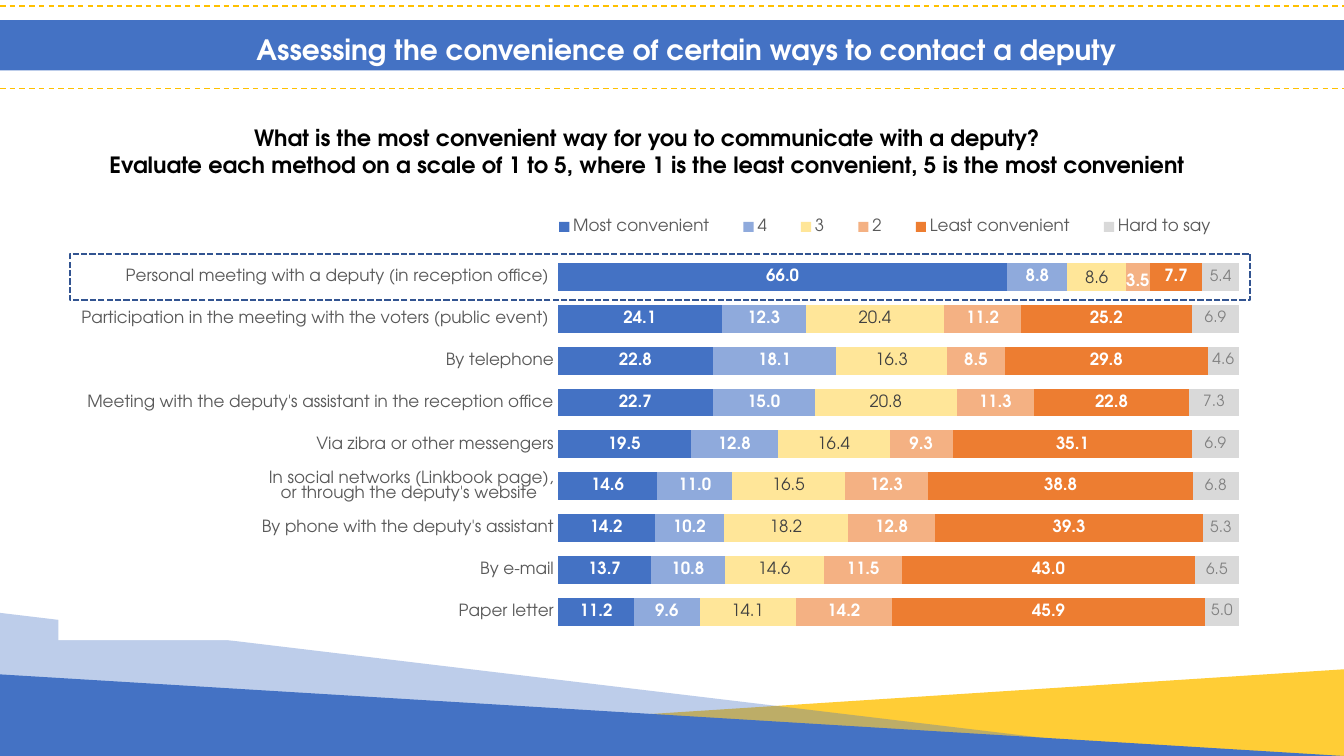
from lxml import etree
from pptx import Presentation
from pptx.chart.data import CategoryChartData
from pptx.dml.color import RGBColor
from pptx.enum.chart import XL_CHART_TYPE as ChartType
from pptx.enum.chart import XL_LABEL_POSITION as LabelPosition
from pptx.enum.chart import XL_LEGEND_POSITION as LegendPosition
from pptx.enum.chart import XL_TICK_MARK as TickMark
from pptx.enum.dml import MSO_LINE as Dash
from pptx.enum.shapes import MSO_CONNECTOR as Connector
from pptx.enum.shapes import MSO_SHAPE as Shape
from pptx.enum.text import MSO_ANCHOR as Anchor
from pptx.enum.text import PP_ALIGN as Align
from pptx.oxml import parse_xml
from pptx.oxml.ns import nsdecls, qn
from pptx.util import Inches, Pt

WIDTH, HEIGHT = 13.33, 7.5
FONT = "TeX Gyre Adventor"
WHITE = RGBColor(0xFF, 0xFF, 0xFF)
BLACK = RGBColor(0, 0, 0)
BLUE = RGBColor(0x44, 0x72, 0xC4)
NAVY = RGBColor(0x32, 0x54, 0x91)
LIGHT_BLUE = RGBColor(0x8F, 0xAA, 0xDC)
GOLD = RGBColor(0xFF, 0xC0, 0x00)
PALE_YELLOW = RGBColor(0xFF, 0xE6, 0x99)
PEACH = RGBColor(0xF4, 0xB1, 0x83)
ORANGE = RGBColor(0xED, 0x7D, 0x31)
LIGHT_GREY = RGBColor(0xD9, 0xD9, 0xD9)
GREY = RGBColor(0x80, 0x80, 0x80)
AXIS_GREY = RGBColor(0x59, 0x59, 0x59)
DARK_GREY = RGBColor(0x40, 0x40, 0x40)

# Lines, box (left, top, width, height), font
TEXTS = [
    (["Assessing the convenience of certain ways to contact a deputy"],
     (1.18, 0.27, 11.26, 0.44), {"size": Pt(20), "bold": True, "color": WHITE}),
    (["What is the most convenient way for you to communicate with a deputy?",
      "Evaluate each method on a scale of 1 to 5, where 1 is the least convenient, "
      "5 is the most convenient"],
     (0.79, 1.18, 11.26, 0.64), {"size": Pt(16), "bold": True, "color": BLACK}),
]

# Top, width, apex position, colour, opacity in percent
WEDGES = [
    (6.64, WIDTH, 1, GOLD, 79),
    (6.69, WIDTH, 0, BLUE, 100),
    (6.08, 11.85, 0, BLUE, 35),
]
DASHED_LINE_TOPS = [0.06, 0.88]
BANNER_BOX = (0, 0.2, WIDTH, 0.5)
HIGHLIGHT_BOX = (0.69, 2.52, 11.71, 0.46)
CHART_BOX = (0.58, 1.82, 11.71, 4.53)

# Shares of the chart's size: left, top, width, height
PLOT_LAYOUT = (0.423, 0.159, 0.577, 0.825)
LEGEND_LAYOUT = (0.4, 0.06, 0.6, 0.07)
# Downward shift of the first label in a series, as a share of the chart's height
FIRST_LABEL_SHIFTS = {"3": 0.005, "2": 0.01}

METHODS = [
    "Personal meeting with a deputy (in reception office) ",
    "Participation in the meeting with the voters (public event) ",
    "By telephone",
    "Meeting with the deputy's assistant in the reception office",
    "Via zibra or other messengers",
    "In social networks (Linkbook page),\nor through the deputy's website ",
    "By phone with the deputy's assistant",
    "By e-mail",
    "Paper letter",
]
BOLD_WHITE = {"size": Pt(12), "bold": True, "color": WHITE}
# Name, values, bar colour, label font
RATINGS = [
    ("Most convenient", (66, 24.1, 22.8, 22.7, 19.5, 14.6, 14.2, 13.7, 11.2),
     BLUE, BOLD_WHITE),
    ("4", (8.8, 12.3, 18.1, 15, 12.8, 11, 10.2, 10.8, 9.6), LIGHT_BLUE, BOLD_WHITE),
    ("3", (8.6, 20.4, 16.3, 20.8, 16.4, 16.5, 18.2, 14.6, 14.1),
     PALE_YELLOW, {"size": Pt(12), "bold": False, "color": DARK_GREY}),
    ("2", (3.5, 11.2, 8.5, 11.3, 9.3, 12.3, 12.8, 11.5, 14.2), PEACH, BOLD_WHITE),
    ("Least convenient", (7.7, 25.2, 29.8, 22.8, 35.1, 38.8, 39.3, 43, 45.9),
     ORANGE, BOLD_WHITE),
    ("Hard to say", (5.4, 6.9, 4.6, 7.3, 6.9, 6.8, 5.3, 6.5, 5),
     LIGHT_GREY, {"size": Pt(11), "bold": False, "color": GREY}),
]


def inches(box):
    return [Inches(length) for length in box]


def set_font(font, color, **values):
    font.name = FONT
    font.color.rgb = color
    for name, value in values.items():
        setattr(font, name, value)


def add_filled_shape(slide, kind, box, color=None):
    """Add a shape without outline; no colour means no fill."""
    shape = slide.shapes.add_shape(kind, *inches(box))
    shape.shadow.inherit = False
    shape.line.fill.background()
    if color is None:
        shape.fill.background()
    else:
        shape.fill.solid()
        shape.fill.fore_color.rgb = color
    return shape


def add_wedge(slide, top, width, apex, color, opacity):
    wedge = add_filled_shape(slide, Shape.ISOSCELES_TRIANGLE,
                             (0, top, width, HEIGHT - top), color)
    wedge.adjustments[0] = apex
    if opacity < 100:
        color_element = wedge.fill._xPr.find(".//" + qn("a:srgbClr"))
        etree.SubElement(color_element, qn("a:alpha"), val=str(opacity * 1000))


def add_dashed_line(slide, top):
    line = slide.shapes.add_connector(Connector.STRAIGHT,
                                      *inches((0, top, WIDTH, top)))
    line.line.color.rgb = GOLD
    line.line.width = Pt(1)
    line.line.dash_style = Dash.DASH
    etree.SubElement(line._element.spPr, qn("a:effectLst"))


def add_text(slide, lines, box, font):
    frame = slide.shapes.add_textbox(*inches(box)).text_frame
    frame.word_wrap = True
    frame.vertical_anchor = Anchor.MIDDLE
    frame.text = "\n".join(lines)
    for paragraph in frame.paragraphs:
        paragraph.alignment = Align.CENTER
        set_font(paragraph.runs[0].font, **font)


def layout_xml(shares, target=""):
    """Manual chart layout from left, top, width and height shares."""
    modes = "".join(f'<c:{side}Mode val="edge"/>' for side in "xy")
    sizes = "".join(f'<c:{side} val="{share}"/>' for side, share in zip("xywh", shares))
    return parse_xml(f'<c:layout {nsdecls("c")}><c:manualLayout>{target}{modes}{sizes}'
                     "</c:manualLayout></c:layout>")


def replace_layout(parent, layout, position):
    for old in parent.findall(qn("c:layout")):
        parent.remove(old)
    parent.insert(position, layout)


def shift_first_label(series, shift, font):
    label = series.points[0].data_label
    set_font(label.font, **font)
    label.position = LabelPosition.CENTER
    element = series.data_labels._element.find(qn("c:dLbl"))
    replace_layout(element, parse_xml(
        f'<c:layout {nsdecls("c")}><c:manualLayout><c:x val="0"/><c:y val="{shift}"/>'
        "</c:manualLayout></c:layout>"), 1)


def add_ratings_chart(slide):
    data = CategoryChartData(number_format="0.0")
    data.categories = METHODS
    for name, values, _, _ in RATINGS:
        data.add_series(name, values)
    chart = slide.shapes.add_chart(ChartType.BAR_STACKED_100, *inches(CHART_BOX),
                                   data).chart
    set_font(chart.font, BLACK, size=Pt(11))
    chart.has_title = False
    chart.has_legend = True
    chart.legend.position = LegendPosition.TOP
    chart.legend.include_in_layout = False
    set_font(chart.legend.font, AXIS_GREY, size=Pt(12))

    methods_axis = chart.category_axis
    methods_axis.reverse_order = True
    methods_axis.major_tick_mark = TickMark.NONE
    methods_axis.format.line.fill.background()
    set_font(methods_axis.tick_labels.font, AXIS_GREY, size=Pt(12))
    chart.value_axis.visible = False
    chart.value_axis.has_major_gridlines = False

    plot = chart.plots[0]
    plot.gap_width, plot.overlap, plot.vary_by_categories = 50, 100, False
    for series, (name, _, color, font) in zip(plot.series, RATINGS):
        series.format.fill.solid()
        series.format.fill.fore_color.rgb = color
        labels = series.data_labels
        labels.show_value = True
        labels.number_format = "0.0"
        labels.number_format_is_linked = False
        labels.position = LabelPosition.CENTER
        set_font(labels.font, **font)
        if name in FIRST_LABEL_SHIFTS:
            shift_first_label(series, FIRST_LABEL_SHIFTS[name], font)

    chart_element = chart._chartSpace.chart
    replace_layout(chart_element.plotArea,
                   layout_xml(PLOT_LAYOUT, '<c:layoutTarget val="inner"/>'), 0)
    replace_layout(chart.legend._element, layout_xml(LEGEND_LAYOUT), 1)
    chart_element.addnext(parse_xml(
        f'<c:spPr {nsdecls("c", "a")}><a:solidFill><a:srgbClr val="{WHITE}"/>'
        "</a:solidFill><a:ln><a:noFill/></a:ln></c:spPr>"))


def main():
    presentation = Presentation()
    presentation.slide_width, presentation.slide_height = inches((WIDTH, HEIGHT))
    slide = presentation.slides.add_slide(presentation.slide_layouts[6])
    for wedge in WEDGES:
        add_wedge(slide, *wedge)
    add_filled_shape(slide, Shape.RECTANGLE, BANNER_BOX, BLUE)
    for top in DASHED_LINE_TOPS:
        add_dashed_line(slide, top)
    for text in TEXTS:
        add_text(slide, *text)
    add_ratings_chart(slide)
    highlight = add_filled_shape(slide, Shape.RECTANGLE, HIGHLIGHT_BOX)
    highlight.line.color.rgb = NAVY
    highlight.line.width = Pt(1.5)
    highlight.line.dash_style = Dash.SQUARE_DOT
    presentation.save("out.pptx")


if __name__ == "__main__":
    main()
